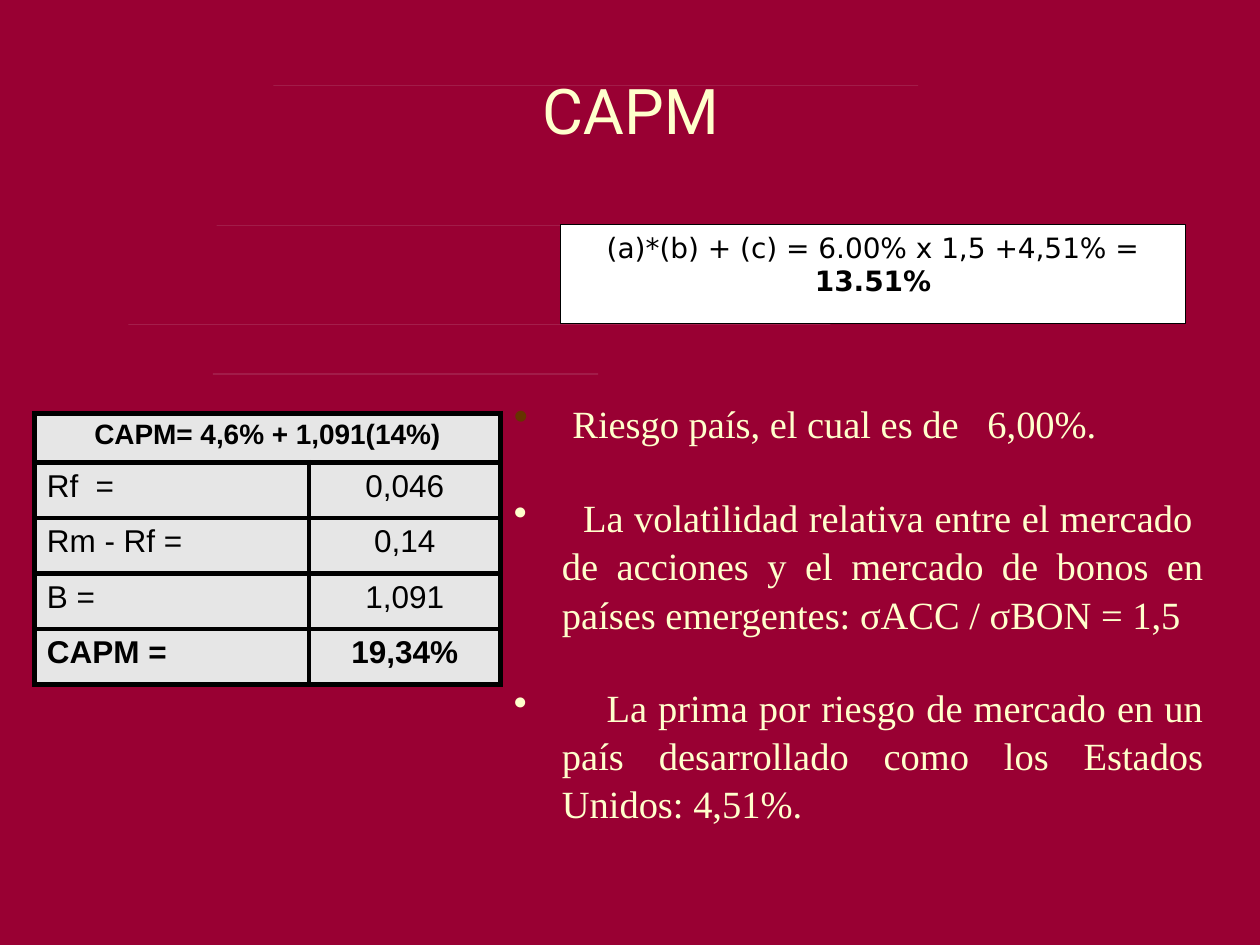
from lxml import etree
from pptx import Presentation
from pptx.dml.color import RGBColor
from pptx.enum.shapes import MSO_SHAPE
from pptx.enum.text import MSO_ANCHOR, PP_ALIGN
from pptx.oxml.ns import qn
from pptx.util import Cm, Pt

RECT = MSO_SHAPE.RECTANGLE
TOP, MIDDLE = MSO_ANCHOR.TOP, MSO_ANCHOR.MIDDLE
LEFT, CENTER, JUSTIFY = PP_ALIGN.LEFT, PP_ALIGN.CENTER, PP_ALIGN.JUSTIFY

COLORS = {
    "back": "990033",
    "cell": "E6E6E6",
    "pale": "F3F3F3",
    "white": "FFFFFF",
    "black": "000000",
    "cream": "FFFFCC",
    "brown": "663300",
}


def rgb(name):
    return RGBColor.from_string(COLORS[name])


class Deck:
    def __init__(self, prs):
        self.s = prs.slides.add_slide(prs.slide_layouts[6])
        fill = self.s.background.fill
        fill.solid()
        fill.fore_color.rgb = rgb("back")

    def run(self, p, text, size, font, color, bold=False):
        r = p.add_run()
        r.text = text
        r.font.size = Pt(size)
        r.font.name = font
        r.font.bold = bold
        r.font.color.rgb = rgb(color)

    def rect(self, x, y, w, h, fill, line=None):
        sp = self.s.shapes.add_shape(RECT, Cm(x), Cm(y), Cm(w), Cm(h))
        sp.shadow.inherit = False
        sp.fill.solid()
        sp.fill.fore_color.rgb = rgb(fill)
        if line:
            sp.line.color.rgb = rgb(line)
            sp.line.width = Pt(0.75)
        else:
            sp.line.fill.background()
        return sp

    def formula(self, x, y, w, h, parts):
        tf = self.rect(x, y, w, h, "white", "black").text_frame
        tf.word_wrap = True
        tf.vertical_anchor = TOP
        p = tf.paragraphs[0]
        p.alignment = CENTER
        for text, bold in parts:
            self.run(p, text, 16, "DejaVu Sans", "black", bold)

    def title(self, x, y, w, h, text):
        tf = self.s.shapes.add_textbox(Cm(x), Cm(y), Cm(w), Cm(h)).text_frame
        tf.word_wrap = False
        p = tf.paragraphs[0]
        p.alignment = CENTER
        self.run(p, text, 36, "Roboto", "cream")

    def bullets(self, x, y, w, h, items):
        tf = self.s.shapes.add_textbox(Cm(x), Cm(y), Cm(w), Cm(h)).text_frame
        tf.word_wrap = True
        tf.vertical_anchor = MIDDLE
        tf.margin_bottom = Cm(0.53)
        for i, parts in enumerate(items):
            p = tf.add_paragraph() if i else tf.paragraphs[0]
            p.alignment = JUSTIFY
            p.line_spacing = 1.04
            p.space_before = Pt(26 if i else 0)
            pPr = p._p.get_or_add_pPr()
            pPr.set("marL", str(Cm(0.97)))
            pPr.set("indent", str(-Cm(0.97)))
            etree.SubElement(pPr, qn("a:buChar"), char="•")
            for part in parts:
                self.run(p, *part)

    def border(self, cell):
        tcPr = cell._tc.get_or_add_tcPr()
        for i, side in enumerate(("lnL", "lnR", "lnT", "lnB")):
            ln = etree.Element(qn(f"a:{side}"), w=str(Pt(3)))
            fill = etree.SubElement(ln, qn("a:solidFill"))
            etree.SubElement(fill, qn("a:srgbClr"), val=COLORS["black"])
            tcPr.insert(i, ln)

    def table(self, x, y, widths, heights, rows):
        tbl = self.s.shapes.add_table(
            len(rows), len(widths), Cm(x), Cm(y), Cm(sum(widths)), Cm(sum(heights))
        ).table
        tbl.first_row = tbl.horz_banding = False
        for col, w in zip(tbl.columns, widths):
            col.width = Cm(w)
        for row, h in zip(tbl.rows, heights):
            row.height = Cm(h)
        tbl.cell(0, 0).merge(tbl.cell(0, len(widths) - 1))
        for i, row in enumerate(rows):
            for j in range(len(widths)):
                cell = tbl.cell(i, j)
                cell.fill.solid()
                cell.fill.fore_color.rgb = rgb("cell")
                self.border(cell)
                if j < len(row):
                    p = cell.text_frame.paragraphs[0]
                    p.alignment = CENTER if i == 0 or j else LEFT
                    bold = i in (0, len(rows) - 1)
                    self.run(p, row[j], 18 if i else 16, "Arial", "black", bold)


def main():
    prs = Presentation()
    prs.slide_width, prs.slide_height = Cm(25.4), Cm(19.05)
    deck = Deck(prs)

    for x, y, w, fill in (
        (5.51, 1.73, 13, "cell"),
        (4.29, 7.54, 7.77, "cell"),
        (2.59, 6.55, 14.15, "pale"),
        (4.37, 4.55, 7.39, "cell"),
    ):
        deck.rect(x, y, w, 0, fill)

    deck.table(0.69, 8.33, [5.54, 3.86], [0.99] + [1.12] * 4, [
        ["CAPM= 4,6% + 1,091(14%)"],
        ["Rf  =", "0,046"],
        ["Rm - Rf =", "0,14"],
        ["B =", "1,091"],
        ["CAPM =", "19,34%"],
    ])
    deck.formula(11.3, 4.52, 12.6, 2, [
        ("(a)*(b) + (c) = 6.00% x 1,5 +4,51% = ", False),
        ("13.51%", True),
    ])
    body = (22, "Times New Roman", "cream")
    deck.bullets(10.11, 7.52, 14.4, 9.98, [
        [(" ", 24, "Roboto", "brown"),
         ("Riesgo país, el cual es de   6,00%. ", *body)],
        [("  La volatilidad relativa entre el mercado  de acciones y el mercado "
          "de bonos en países emergentes: σACC / σBON = 1,5 ", *body)],
        [("    La prima por riesgo de mercado en un país desarrollado como "
          "los Estados Unidos: 4,51%. ", *body)],
    ])
    deck.title(3.71, 1.32, 18, 2.21, "CAPM")
    prs.save("out.pptx")


if __name__ == "__main__":
    main()
